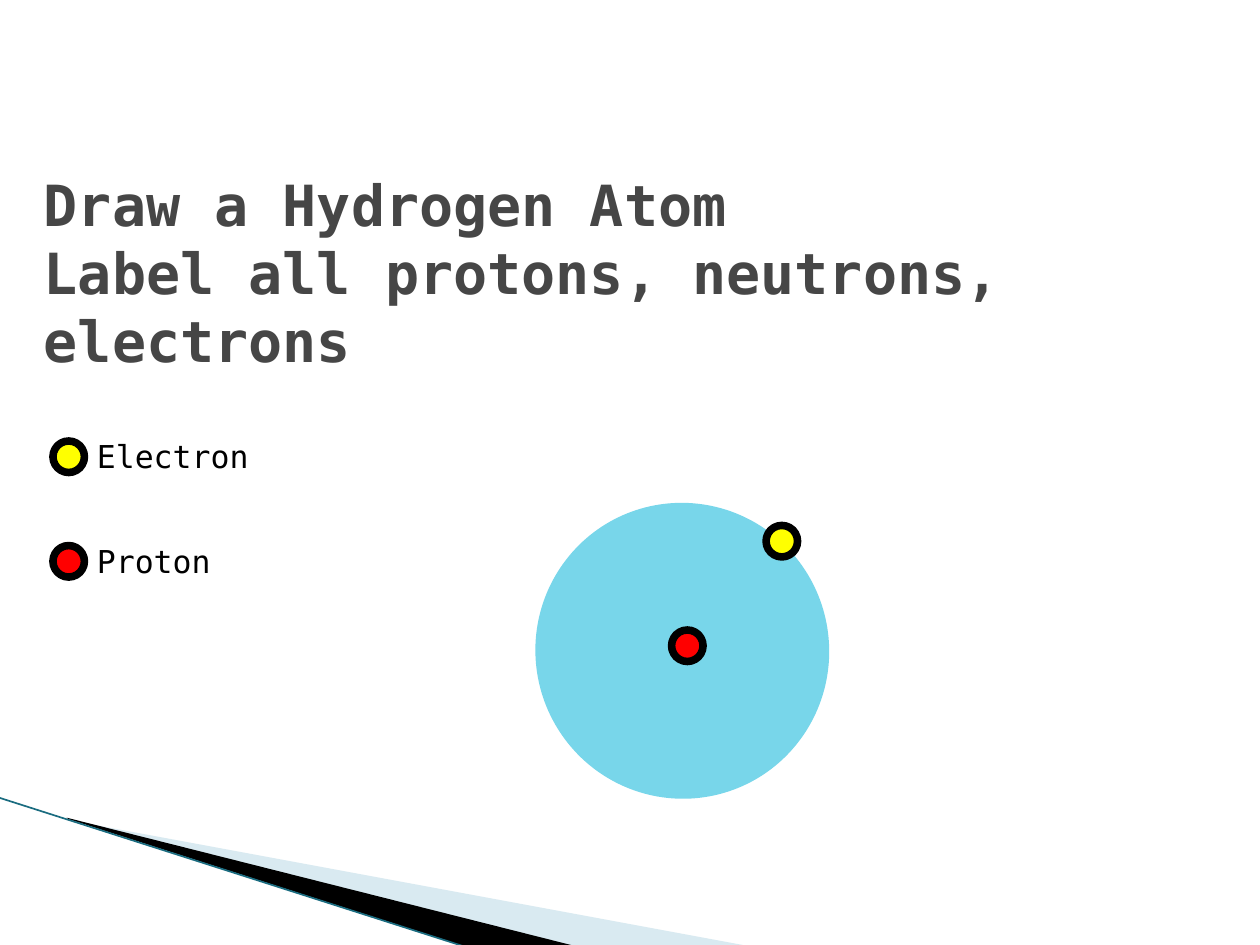
import pptx
import pptx.dml.color
import pptx.enum.shapes
import pptx.enum.text
import pptx.oxml
import pptx.oxml.ns
import pptx.util
from pptx.util import Inches


def rgb(value):
    return pptx.dml.color.RGBColor.from_string(value)


class Deck:
    font = "DejaVu Sans Mono"
    outline = 4.33

    def __init__(self, prs):
        self.s = prs.slides.add_slide(prs.slide_layouts[6])

    def polygon(self, points, color, alpha=None):
        pts = [(Inches(x), Inches(y)) for x, y in points]
        fb = self.s.shapes.build_freeform(*pts[0])
        fb.add_line_segments(pts[1:])
        sp = fb.convert_to_shape()
        sp.shadow.inherit = False
        sp.fill.solid()
        sp.fill.fore_color.rgb = rgb(color)
        sp.line.fill.background()
        if alpha is not None:
            clr = sp.fill._xPr.find(".//" + pptx.oxml.ns.qn("a:srgbClr"))
            clr.append(pptx.oxml.parse_xml(
                f'<a:alpha {pptx.oxml.ns.nsdecls("a")} val="{alpha * 1000}"/>'))

    def line(self, x1, y1, x2, y2, color, width):
        cn = self.s.shapes.add_connector(
            pptx.enum.shapes.MSO_CONNECTOR.STRAIGHT,
            Inches(x1), Inches(y1), Inches(x2), Inches(y2))
        cn.line.color.rgb = rgb(color)
        cn.line.width = pptx.util.Pt(width)
        cn._element.spPr.append(pptx.oxml.parse_xml(
            f'<a:effectLst {pptx.oxml.ns.nsdecls("a")}/>'))

    def circle(self, x, y, w, h, fill, line):
        sp = self.s.shapes.add_shape(
            pptx.enum.shapes.MSO_SHAPE.OVAL,
            Inches(x), Inches(y), Inches(w), Inches(h))
        sp.shadow.inherit = False
        sp.fill.solid()
        sp.fill.fore_color.rgb = rgb(fill)
        sp.line.color.rgb = rgb(line)
        sp.line.width = pptx.util.Pt(self.outline)
        return sp

    def particle(self, x, y, fill):
        self.circle(x, y, 0.25, 0.25, fill, "000000")

    def text(self, x, y, w, h, text, size, color="000000", bold=False,
             anchor=pptx.enum.text.MSO_ANCHOR.TOP):
        tf = self.s.shapes.add_textbox(
            Inches(x), Inches(y), Inches(w), Inches(h)).text_frame
        tf.word_wrap = True
        tf.vertical_anchor = anchor
        tf.text = text
        for r in tf.paragraphs[0].runs:
            r.font.name = self.font
            r.font.size = pptx.util.Pt(size)
            r.font.bold = bold
            r.font.color.rgb = rgb(color)


def main():
    prs = pptx.Presentation()
    prs.slide_width, prs.slide_height = Inches(10), Inches(7.5)
    deck = Deck(prs)

    # Corner decoration
    deck.polygon([(0.55, 6.51), (5.95, 7.51), (4.56, 7.51), (0.55, 6.5)],
                 "A0CBDC", alpha=40)
    deck.polygon([(0.53, 6.49), (4.57, 7.51), (3.72, 7.52), (0.54, 6.5)],
                 "000000")
    deck.line(-0.01, 6.33, 3.71, 7.52, "1A6C80", 0.95)

    # Title
    deck.text(0.25, 1.33, 9, 1.65,
              "Draw a Hydrogen Atom\vLabel all protons, neutrons, electrons",
              32.4, "464646", True, pptx.enum.text.MSO_ANCHOR.MIDDLE)

    # Atom
    electron, proton = "FFFF00", "FF0000"
    shell = deck.circle(4.28, 4.02, 2.27, 2.29, "78D6EA", "78D6EA")
    shell.rotation = 163.6
    deck.particle(5.33, 5, proton)
    deck.particle(6.08, 4.17, electron)

    # Legend
    for y, label, color in [(3.5, "Electron", electron),
                            (4.33, "Proton", proton)]:
        deck.particle(0.42, y, color)
        deck.text(0.67, y - 0.08, 2.08, 0.4, label, 18)

    prs.save("out.pptx")


if __name__ == "__main__":
    main()
